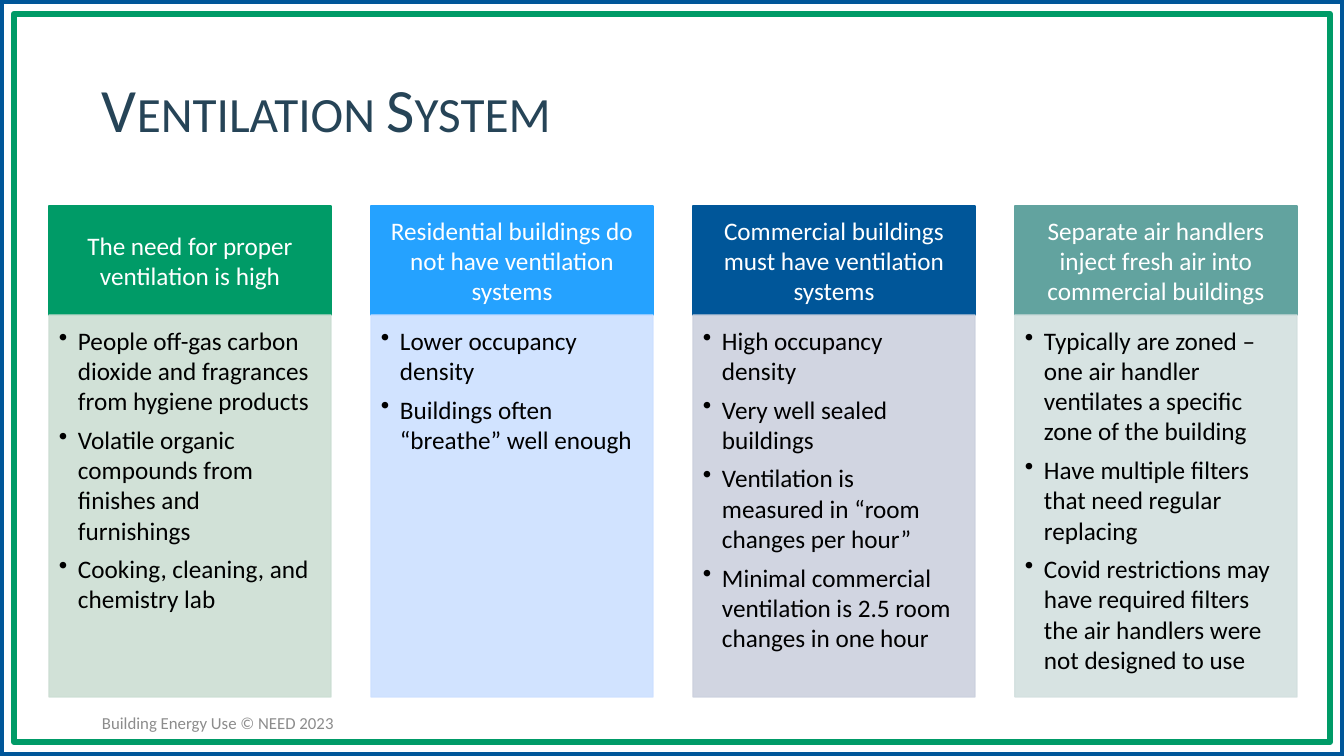
import lxml.etree
import pptx
import pptx.dml.color
import pptx.enum.shapes
import pptx.enum.text
import pptx.oxml.ns
import pptx.util

RGBColor = pptx.dml.color.RGBColor
ALIGN = pptx.enum.text.PP_ALIGN
ANCHOR = pptx.enum.text.MSO_ANCHOR

WHITE = RGBColor(0xFF, 0xFF, 0xFF)
BLACK = RGBColor(0x00, 0x00, 0x00)
GRAY = RGBColor(0x8C, 0x8C, 0x8C)
SLATE = RGBColor(0x26, 0x44, 0x57)
GREEN = RGBColor(0x00, 0x9B, 0x67)
PALE_GREEN = RGBColor(0xCC, 0xDE, 0xD3)
SKY = RGBColor(0x25, 0xA2, 0xFF)
PALE_SKY = RGBColor(0xCD, 0xE0, 0xFF)
NAVY = RGBColor(0x00, 0x56, 0x99)
PALE_NAVY = RGBColor(0xCC, 0xD1, 0xDE)
TEAL = RGBColor(0x62, 0xA3, 0x9F)
PALE_TEAL = RGBColor(0xD3, 0xE0, 0xDF)

SLIDE_WIDTH, SLIDE_HEIGHT = 1344, 756
EMU_PER_PX = 12192000 / SLIDE_WIDTH

COLUMN_LEFT, COLUMN_STEP, COLUMN_WIDTH = 49, 322, 282
HEADER_TOP, HEADER_HEIGHT, BODY_HEIGHT = 206, 109, 382

COLUMNS = [
    (GREEN, PALE_GREEN, "The need for proper ventilation is high", [
        "People off-gas carbon dioxide and fragrances from hygiene products",
        "Volatile organic compounds from finishes and furnishings",
        "Cooking, cleaning, and chemistry lab",
    ]),
    (SKY, PALE_SKY, "Residential buildings do not have ventilation systems", [
        "Lower occupancy density",
        "Buildings often “breathe” well enough",
    ]),
    (NAVY, PALE_NAVY, "Commercial buildings must have ventilation systems", [
        "High occupancy density",
        "Very well sealed buildings",
        "Ventilation is measured in “room changes per hour”",
        "Minimal commercial ventilation is 2.5 room changes in one hour",
    ]),
    (TEAL, PALE_TEAL, "Separate air handlers inject fresh air into commercial buildings", [
        "Typically are zoned – one air handler ventilates a specific zone of the building",
        "Have multiple filters that need regular replacing",
        "Covid restrictions may have required filters the air handlers were not designed to use",
    ]),
]


def px(length):
    return pptx.util.Emu(round(length * EMU_PER_PX))


class SlideBuilder:
    font_name = "Calibri"

    def __init__(self, presentation):
        self.slide = presentation.slides.add_slide(presentation.slide_layouts[6])

    def rectangle(self, box, line_color, line_width, fill_color=None):
        shape = self.slide.shapes.add_shape(
            pptx.enum.shapes.MSO_SHAPE.RECTANGLE, *map(px, box))
        shape.shadow.inherit = False
        if fill_color is None:
            shape.fill.background()
        else:
            shape.fill.solid()
            shape.fill.fore_color.rgb = fill_color
        shape.line.color.rgb = line_color
        shape.line.width = pptx.util.Pt(line_width)
        return shape

    def make_translucent(self, shape, percent):
        for color in shape._element.spPr.iter(pptx.oxml.ns.qn("a:srgbClr")):
            alpha = lxml.etree.SubElement(color, pptx.oxml.ns.qn("a:alpha"))
            alpha.set("val", str(percent * 1000))

    def fill_text(self, shape, texts, size, color, anchor=ANCHOR.MIDDLE, align=ALIGN.LEFT,
                  insets=(10, 5, 10, 5), space_after=0, bullet_indent=0):
        frame = shape.text_frame
        frame.word_wrap = True
        frame.vertical_anchor = anchor
        frame.margin_left, frame.margin_top, frame.margin_right, frame.margin_bottom = map(px, insets)
        for index, text in enumerate(texts):
            paragraph = frame.add_paragraph() if index else frame.paragraphs[0]
            paragraph.text = text
            paragraph.alignment = align
            paragraph.space_after = pptx.util.Pt(space_after)
            if bullet_indent:
                self.add_bullet(paragraph, bullet_indent)
            paragraph.font.name = self.font_name
            paragraph.font.size = pptx.util.Pt(size)
            paragraph.font.color.rgb = color

    def add_bullet(self, paragraph, indent):
        properties = paragraph._p.get_or_add_pPr()
        properties.set("marL", str(px(indent)))
        properties.set("indent", str(-px(indent)))
        bullet = lxml.etree.SubElement(properties, pptx.oxml.ns.qn("a:buChar"))
        bullet.set("char", "•")

    def label(self, box, text, size, color):
        shape = self.slide.shapes.add_textbox(*map(px, box))
        self.fill_text(shape, [text], size, color)
        return shape

    def title(self, box, text):
        paragraph = self.label(box, text, 44, SLATE).text_frame.paragraphs[0]
        paragraph.line_spacing = 0.9
        paragraph._p.pPr.get_or_add_defRPr().set("cap", "small")

    def column(self, left, color, pale_color, heading, points):
        header = self.rectangle((left, HEADER_TOP, COLUMN_WIDTH, HEADER_HEIGHT), color, 1, color)
        self.fill_text(header, [heading], 18, WHITE, align=ALIGN.CENTER,
                       insets=(14, 8, 14, 8), space_after=6)
        body = self.rectangle((left, HEADER_TOP + HEADER_HEIGHT, COLUMN_WIDTH, BODY_HEIGHT),
                              pale_color, 1, pale_color)
        self.make_translucent(body, 90)
        self.fill_text(body, points, 18, BLACK, anchor=ANCHOR.TOP,
                       insets=(10, 10, 14, 16), space_after=6, bullet_indent=19)


def main():
    presentation = pptx.Presentation()
    presentation.slide_width = px(SLIDE_WIDTH)
    presentation.slide_height = px(SLIDE_HEIGHT)
    builder = SlideBuilder(presentation)
    builder.rectangle((0, 0, SLIDE_WIDTH, SLIDE_HEIGHT), NAVY, 6)
    builder.rectangle((14, 14, 1316, 728), GREEN, 4.5)
    builder.title((92, 40, 1160, 146), "Ventilation System")
    for index, column in enumerate(COLUMNS):
        builder.column(COLUMN_LEFT + index * COLUMN_STEP, *column)
    builder.label((92, 703, 684, 40), "Building Energy Use © NEED 2023", 12, GRAY)
    presentation.save("out.pptx")


if __name__ == "__main__":
    main()
